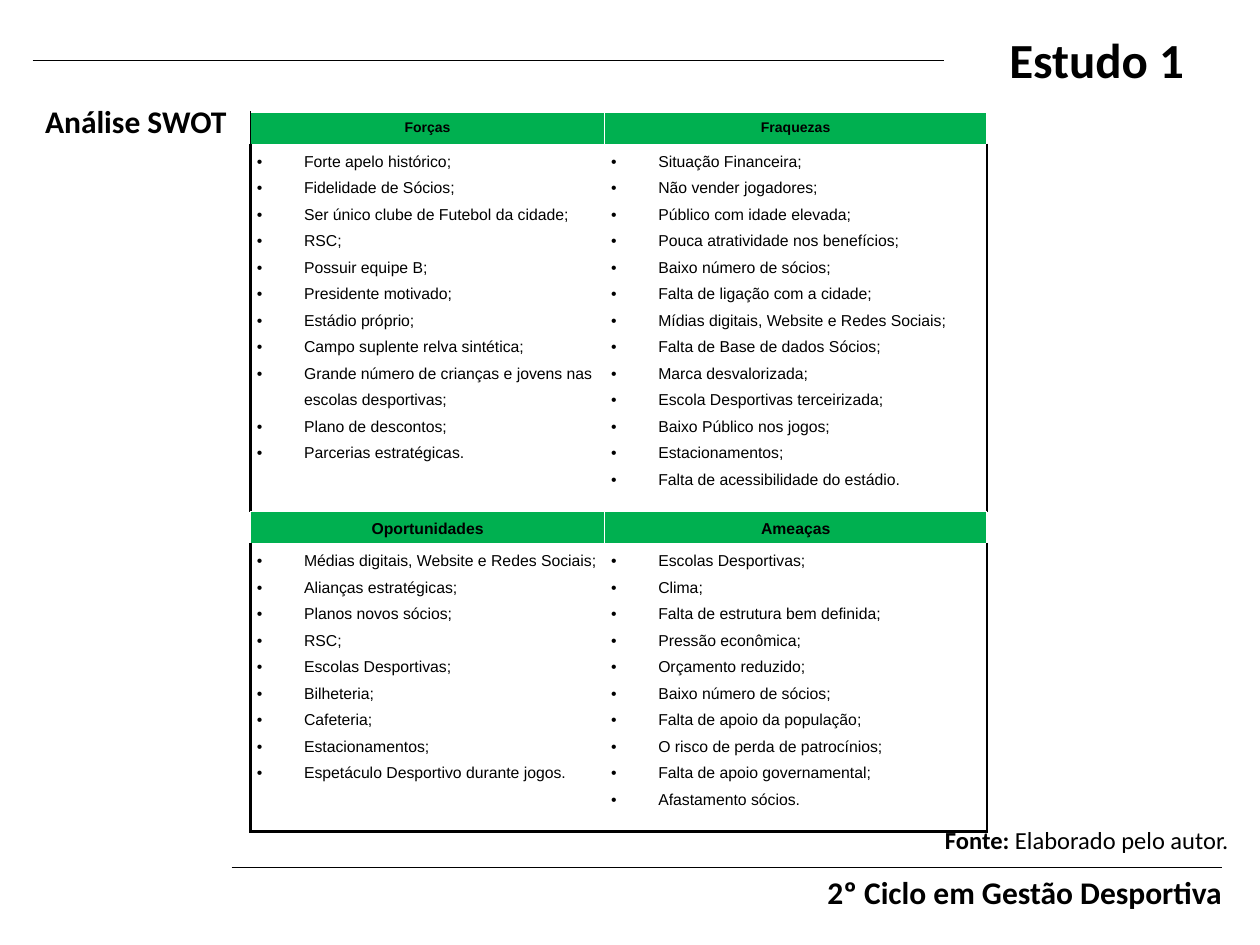
from lxml import etree
from pptx import Presentation
from pptx import util as u
from pptx.dml.color import RGBColor
from pptx.enum import shapes, text
from pptx.oxml import ns

COLORS = {"black": "000000", "white": "FFFFFF", "green": "00B050"}
INDENT = u.Cm(0.95)


def add_run(paragraph, words, font, size, bold):
    run = paragraph.add_run()
    run.text = words
    run.font.name = font
    run.font.size = u.Pt(size)
    run.font.bold = bold
    run.font.color.rgb = RGBColor.from_string(COLORS["black"])


def add_border(cell, side, color, width):
    line = etree.SubElement(cell._tc.get_or_add_tcPr(), ns.qn(f"a:{side}"), w=str(u.Pt(width)))
    fill = etree.SubElement(line, ns.qn("a:solidFill"))
    etree.SubElement(fill, ns.qn("a:srgbClr"), val=COLORS[color])


presentation = Presentation()
presentation.slide_width = u.Cm(25.4)
presentation.slide_height = u.Cm(19.05)
slide = presentation.slides.add_slide(presentation.slide_layouts[6])

for left, right, top in [(4.67, 24.64, 17.48), (0.66, 19.02, 1.22)]:
    rule = slide.shapes.add_connector(
        shapes.MSO_CONNECTOR.STRAIGHT, u.Cm(left), u.Cm(top), u.Cm(right), u.Cm(top))
    rule.line.color.rgb = RGBColor.from_string(COLORS["black"])
    rule.line.width = u.Pt(0.5)
    etree.SubElement(rule._element.spPr, ns.qn("a:effectLst"))

swot = [
    ("Forças", 8, [
        "Forte apelo histórico;", "Fidelidade de Sócios;",
        "Ser único clube de Futebol da cidade;", "RSC;", "Possuir equipe B;",
        "Presidente motivado;", "Estádio próprio;", "Campo suplente relva sintética;",
        "Grande número de crianças e jovens nas escolas desportivas;",
        "Plano de descontos;", "Parcerias estratégicas."]),
    ("Fraquezas", 8, [
        "Situação Financeira;", "Não vender jogadores;", "Público com idade elevada;",
        "Pouca atratividade nos benefícios;", "Baixo número de sócios;",
        "Falta de ligação com a cidade;", "Mídias digitais, Website e Redes Sociais;",
        "Falta de Base de dados Sócios;", "Marca desvalorizada;",
        "Escola Desportivas terceirizada;", "Baixo Público nos jogos;",
        "Estacionamentos;", "Falta de acessibilidade do estádio."]),
    ("Oportunidades", 9, [
        "Médias digitais, Website e Redes Sociais;", "Alianças estratégicas;",
        "Planos novos sócios;", "RSC;", "Escolas Desportivas;", "Bilheteria;",
        "Cafeteria;", "Estacionamentos;", "Espetáculo Desportivo durante jogos."]),
    ("Ameaças", 9, [
        "Escolas Desportivas;", "Clima;", "Falta de estrutura bem definida;",
        "Pressão econômica;", "Orçamento reduzido;", "Baixo número de sócios;",
        "Falta de apoio da população;", "O risco de perda de patrocínios;",
        "Falta de apoio governamental;", "Afastamento sócios."]),
]

table = slide.shapes.add_table(4, 2, u.Cm(5.05), u.Cm(2.26), u.Cm(14.84), u.Cm(14.5)).table
table.first_row = False
table.horz_banding = False
for column, width in zip(table.columns, [7.14, 7.7]):
    column.width = u.Cm(width)
for row, height in zip(table.rows, [0.65, 7.4, 0.65, 5.8]):
    row.height = u.Cm(height)

for index, (heading, heading_size, items) in enumerate(swot):
    row, column = index // 2 * 2, index % 2

    heading_cell = table.cell(row, column)
    paragraph = heading_cell.text_frame.paragraphs[0]
    paragraph.alignment = text.PP_ALIGN.CENTER
    paragraph.line_spacing = 1.5
    add_run(paragraph, heading, "Arial", heading_size, True)

    list_cell = table.cell(row + 1, column)
    for position, item in enumerate(items):
        frame = list_cell.text_frame
        paragraph = frame.add_paragraph() if position else frame.paragraphs[0]
        paragraph.line_spacing = 1.5
        properties = paragraph._p.get_or_add_pPr()
        properties.set("marL", str(INDENT))
        properties.set("indent", str(-INDENT))
        etree.SubElement(properties, ns.qn("a:buFont"), typeface="Arial")
        etree.SubElement(properties, ns.qn("a:buChar"), char="•")
        add_run(paragraph, item, "Arial", 9, False)

    borders = {side: ("white", 1) for side in ("lnL", "lnR", "lnT", "lnB")}
    list_borders = borders | {"lnR" if column else "lnL": ("black", 1.5)}
    if row == 2:
        list_borders["lnB"] = ("black", 1.5)
    if index == 0:
        borders["lnL"] = ("black", 1)

    for cell, sides in [(heading_cell, borders), (list_cell, list_borders)]:
        cell.margin_left = cell.margin_right = u.Cm(0.13)
        cell.margin_top = cell.margin_bottom = 0
        for side, (color, width) in sides.items():
            add_border(cell, side, color, width)
    heading_cell.fill.solid()
    heading_cell.fill.fore_color.rgb = RGBColor.from_string(COLORS["green"])
    list_cell.fill.background()

align = text.PP_ALIGN
labels = [
    (16.43, 17.48, 8.53, 1.02, False, align.LEFT, 18, [("2º Ciclo em Gestão Desportiva", True)]),
    (19.02, 0.48, 6.17, 1.45, True, align.CENTER, 28, [("Estudo 1", True)]),
    (0.66, 1.93, 10.62, 1.02, True, align.JUSTIFY, 18, [("Análise SWOT", True)]),
    (18.8, 16.51, 7.52, 0.86, True, align.JUSTIFY, 14,
     [("Fonte: ", True), ("Elaborado pelo autor.", False)]),
]
for left, top, width, height, wrap, alignment, size, runs in labels:
    box = slide.shapes.add_textbox(u.Cm(left), u.Cm(top), u.Cm(width), u.Cm(height))
    box.text_frame.word_wrap = wrap
    box.text_frame.auto_size = text.MSO_AUTO_SIZE.SHAPE_TO_FIT_TEXT
    paragraph = box.text_frame.paragraphs[0]
    paragraph.alignment = alignment
    for words, bold in runs:
        add_run(paragraph, words, "Calibri", size, bold)

presentation.save("out.pptx")
